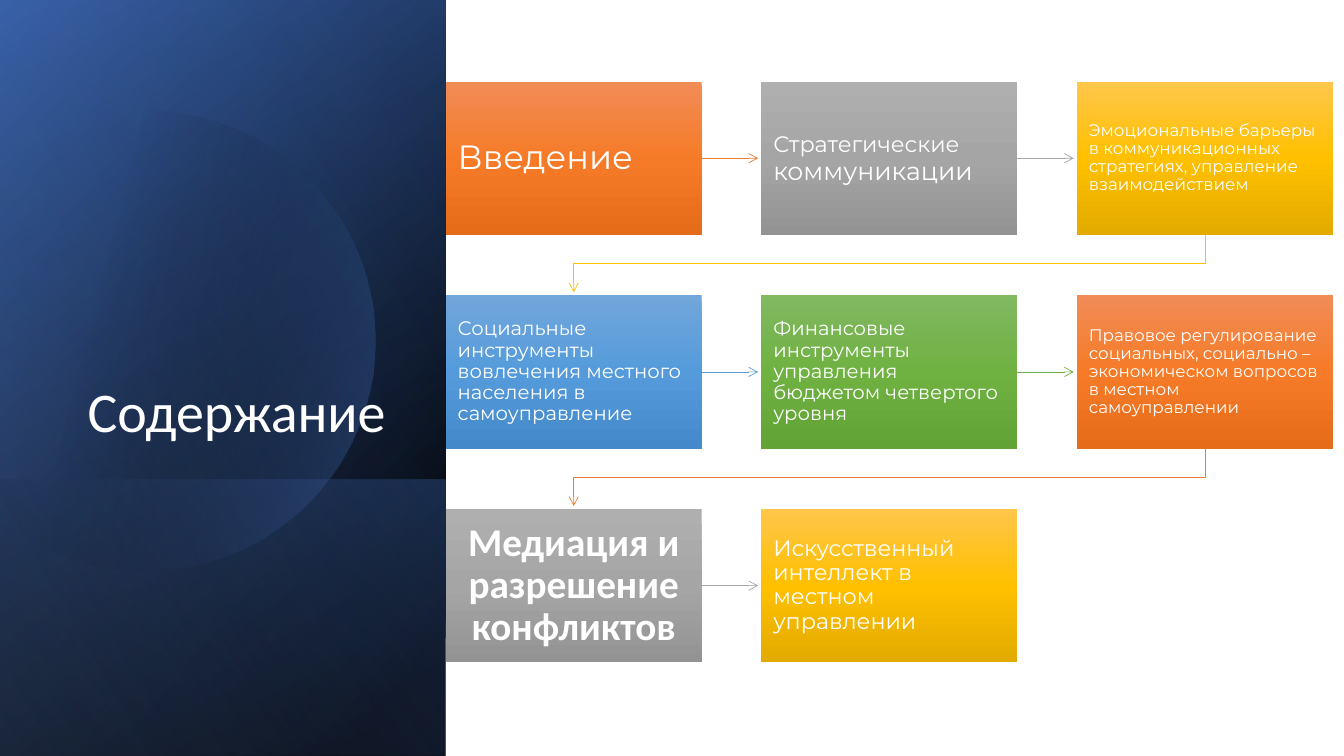
"""Build a contents slide: a dark title panel and a snaking chain of topic tiles."""
import math

import lxml.etree
import pptx
import pptx.dml.color
import pptx.enum.shapes
import pptx.enum.text
import pptx.oxml
import pptx.oxml.ns
import pptx.util

Inches = pptx.util.Inches
qn = pptx.oxml.ns.qn

COLORS = {
    "white": "FFFFFF", "black": "000000", "navy": "2F5597",
    "blue": "4472C4", "pale": "8FAADC",
}
TILE_COLORS = {
    "orange": ("ED7D31", ("F18C57", "F67B28", "E56C19")),
    "gray": ("A5A5A5", ("AFAFAF", "A5A5A5", "939393")),
    "gold": ("FFC000", ("FFC64B", "FFC000", "E3AB00")),
    "sky": ("5B9BD5", ("71A6DB", "559BDB", "448ACA")),
    "green": ("70AD47", ("81B861", "6FB242", "62A336")),
}
TITLE = "Содержание "
TOPICS = [
    ("orange", [("Введение", 24)]),
    ("gray", [("Стратегические", 16), (" коммуникации", 18)]),
    ("gold", [("Эмоциональные барьеры в коммуникационных стратегиях, "
               "управление взаимодействием", 12)]),
    ("sky", [("Социальные инструменты вовлечения местного населения "
              "в самоуправление", 14)]),
    ("green", [("Финансовые инструменты управления бюджетом "
                "четвертого уровня", 14)]),
    ("orange", [("Правовое регулирование социальных, социально – экономическом "
                 "вопросов в местном самоуправлении", 12)]),
    ("gray", [("Медиация и разрешение конфликтов", 28)]),
    ("gold", [("Искусственный интеллект в местном управлении", 16)]),
]
EMPHASIZED = 6

PANEL_WIDTH, SLIDE_HEIGHT = 4.42, 7.5
BASE_LAYERS = [
    (0, 50, [(8, "black", 100), (100, "navy", 100)]),
    (0, 30, [(0, "black", 0), (99, "blue", 46)]),
    (4.76, 130, [(2, "blue", 29), (100, "black", 30)]),
]
GLOW_STOPS = [(29, "black", 0), (100, "blue", 43)]
SHEEN_LAYER = (0, 120, [(0, "black", 0), (99, "pale", 11)])
GLOW_X, GLOW_Y, GLOW_RADIUS = 1.44, 3.38, 2.28

COLUMNS = 3
GRID_LEFT, GRID_TOP = PANEL_WIDTH, 0.81
TILE_WIDTH, TILE_HEIGHT = 2.54, 1.52
COLUMN_STEP, ROW_STEP = 3.13, 2.12
ARROW_GAP = 0.03


def paint_gradient(shape, stops, angle):
    """Fill a shape with (position, hex, opacity) stops and remove its outline."""
    shape.shadow.inherit = False
    shape.line.fill.background()
    shape.fill.background()
    marks = "".join(
        f'<a:gs pos="{position * 1000}"><a:srgbClr val="{color}">'
        f'<a:alpha val="{opacity * 1000}"/></a:srgbClr></a:gs>'
        for position, color, opacity in stops)
    gradient = pptx.oxml.parse_xml(
        f'<a:gradFill {pptx.oxml.ns.nsdecls("a")} rotWithShape="1">'
        f'<a:gsLst>{marks}</a:gsLst>'
        f'<a:lin ang="{angle * 60000}" scaled="0"/></a:gradFill>')
    properties = shape._element.spPr
    properties.replace(properties.find(qn("a:noFill")), gradient)


def named_stops(stops):
    """Look up the colour names of gradient stops."""
    return [(position, COLORS[name], opacity) for position, name, opacity in stops]


def add_panel_layer(slide, top, angle, stops):
    """Add a turned, mirrored rectangle reaching from top to the slide's foot."""
    length = SLIDE_HEIGHT - top
    layer = slide.shapes.add_shape(
        pptx.enum.shapes.MSO_SHAPE.RECTANGLE,
        Inches((PANEL_WIDTH - length) / 2),
        Inches(top + (length - PANEL_WIDTH) / 2),
        Inches(length), Inches(PANEL_WIDTH))
    layer.rotation = 90
    layer._element.spPr.find(qn("a:xfrm")).set("flipH", "1")
    paint_gradient(layer, named_stops(stops), angle)


def add_glow(slide):
    """Add the circle cut off by the left slide edge."""
    reach = math.acos(-GLOW_X / GLOW_RADIUS)
    steps = 120
    angles = [reach * (2 * step / steps - 1) for step in range(steps + 1)]
    points = [(Inches(GLOW_X + GLOW_RADIUS * math.cos(angle)),
               Inches(GLOW_Y + GLOW_RADIUS * math.sin(angle))) for angle in angles]
    builder = slide.shapes.build_freeform(*points[0])
    builder.add_line_segments(points[1:], close=True)
    paint_gradient(builder.convert_to_shape(), named_stops(GLOW_STOPS), 14)


def format_run(run, size, font, bold=False):
    """Set the font of a white run."""
    run.font.size = pptx.util.Pt(size)
    run.font.name = font
    run.font.bold = bold
    run.font.color.rgb = pptx.dml.color.RGBColor.from_string(COLORS["white"])


def add_title(slide):
    """Place the title placeholder above the panel."""
    title = slide.shapes.title
    slide.shapes._spTree.append(title._element)
    title.left, title.top = Inches(0.64), Inches(1.84)
    title.width, title.height = Inches(3.41), Inches(2.62)
    title.text_frame.text = TITLE
    title.text_frame.vertical_anchor = pptx.enum.text.MSO_ANCHOR.BOTTOM
    paragraph = title.text_frame.paragraphs[0]
    paragraph.alignment = pptx.enum.text.PP_ALIGN.RIGHT
    paragraph.line_spacing = 0.9
    format_run(paragraph.runs[0], 40, "Calibri")


def tile_position(index):
    """Return the left and top of a tile."""
    row, column = divmod(index, COLUMNS)
    return GRID_LEFT + column * COLUMN_STEP, GRID_TOP + row * ROW_STEP


def add_tile(slide, index, color, runs):
    """Add one topic tile with its text."""
    left, top = tile_position(index)
    tile = slide.shapes.add_shape(
        pptx.enum.shapes.MSO_SHAPE.RECTANGLE, Inches(left), Inches(top),
        Inches(TILE_WIDTH), Inches(TILE_HEIGHT))
    shades = TILE_COLORS[color][1]
    paint_gradient(tile, [(50 * i, shade, 100) for i, shade in enumerate(shades)], 90)
    frame = tile.text_frame
    frame.word_wrap = True
    frame.vertical_anchor = pptx.enum.text.MSO_ANCHOR.MIDDLE
    frame.margin_left = frame.margin_right = Inches(0.12)
    frame.margin_top = frame.margin_bottom = Inches(0.13)
    emphasized = index == EMPHASIZED
    alignments = pptx.enum.text.PP_ALIGN
    paragraph = frame.paragraphs[0]
    paragraph.alignment = alignments.CENTER if emphasized else alignments.LEFT
    paragraph.line_spacing = 0.9
    for text, size in runs:
        run = paragraph.add_run()
        run.text = text
        format_run(run, size, "Calibri" if emphasized else "Montserrat", emphasized)


def add_arrow(slide, index, color):
    """Link a tile to the next one, straight in a row or bent to a new row."""
    left, top = tile_position(index)
    next_left, next_top = tile_position(index + 1)
    kinds = pptx.enum.shapes.MSO_CONNECTOR
    wraps = (index + 1) % COLUMNS == 0
    if wraps:
        kind = kinds.ELBOW
        start_y, end_y = top + TILE_HEIGHT, next_top - ARROW_GAP
        middle_x = (left + next_left + TILE_WIDTH) / 2
        middle_y = (start_y + end_y) / 2
        half_drop, half_span = (end_y - start_y) / 2, (left - next_left) / 2
        ends = (middle_x - half_drop, middle_y - half_span,
                middle_x + half_drop, middle_y + half_span)
    else:
        kind = kinds.STRAIGHT
        middle_y = top + TILE_HEIGHT / 2
        ends = left + TILE_WIDTH, middle_y, next_left - ARROW_GAP, middle_y
    arrow = slide.shapes.add_connector(kind, *map(Inches, ends))
    arrow.line.color.rgb = pptx.dml.color.RGBColor.from_string(TILE_COLORS[color][0])
    arrow.line.width = pptx.util.Pt(0.5)
    properties = arrow._element.spPr
    if wraps:
        properties.find(qn("a:xfrm")).set("rot", str(90 * 60000))
    lxml.etree.SubElement(properties.find(qn("a:ln")), qn("a:tailEnd")).set("type", "arrow")
    lxml.etree.SubElement(properties, qn("a:effectLst"))


def main():
    """Build and save the slide."""
    presentation = pptx.Presentation()
    presentation.slide_width = Inches(13.33)
    presentation.slide_height = Inches(SLIDE_HEIGHT)
    slide = presentation.slides.add_slide(presentation.slide_layouts[5])
    for layer in BASE_LAYERS:
        add_panel_layer(slide, *layer)
    add_glow(slide)
    add_panel_layer(slide, *SHEEN_LAYER)
    add_title(slide)
    for index, (color, runs) in enumerate(TOPICS):
        if index + 1 < len(TOPICS):
            add_arrow(slide, index, color)
        add_tile(slide, index, color, runs)
    presentation.save("out.pptx")


if __name__ == "__main__":
    main()
